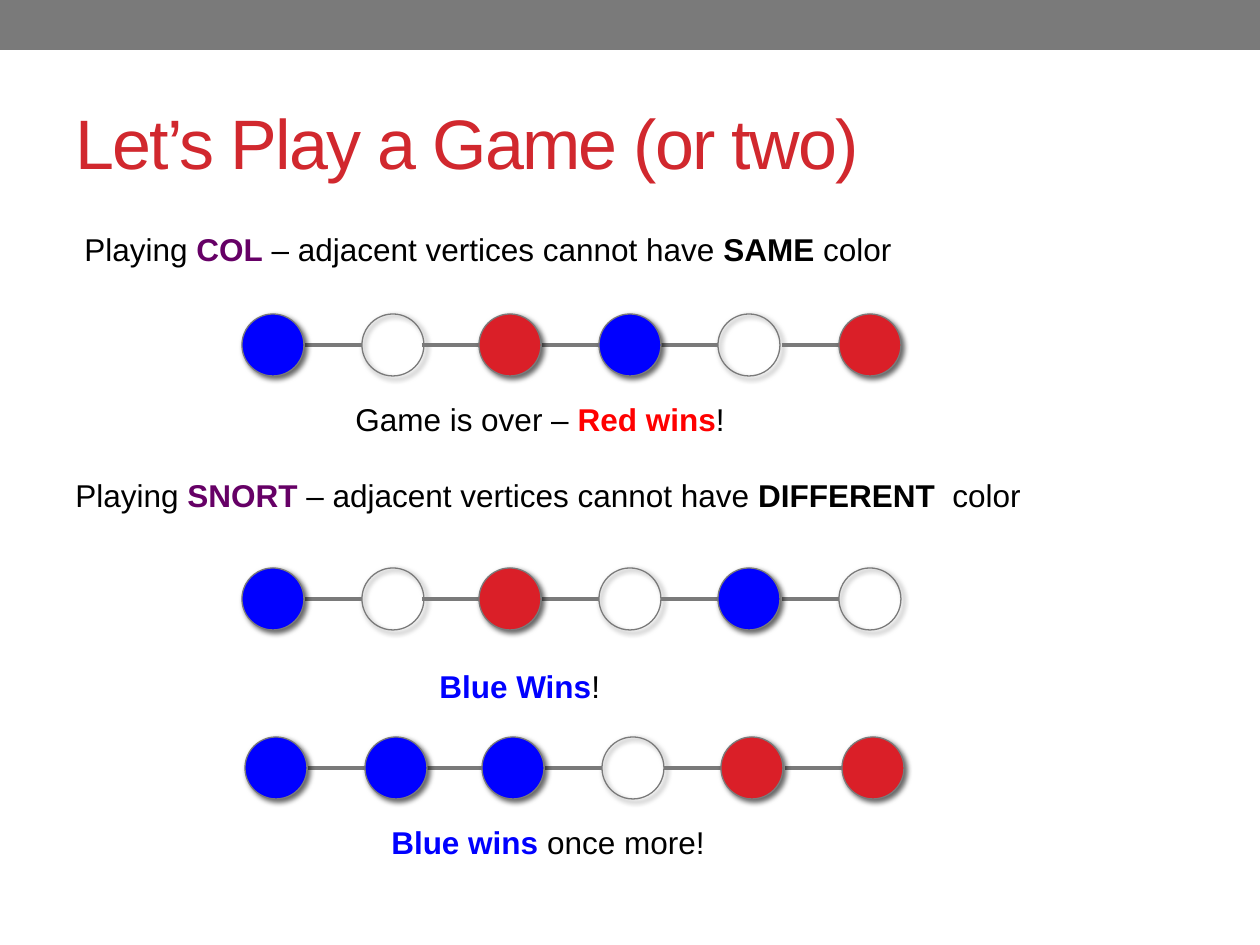
from lxml.etree import SubElement
from pptx import Presentation
from pptx.dml.color import RGBColor
from pptx.enum.shapes import MSO_CONNECTOR as Link, MSO_SHAPE as Kind
from pptx.enum.text import MSO_ANCHOR as Anchor
from pptx.oxml import parse_xml
from pptx.oxml.ns import nsdecls, qn
from pptx.util import Pt

SCALE = 914400 / 126
GRAY = RGBColor(0x7A, 0x7A, 0x7A)
TITLE = RGBColor(0xD1, 0x28, 0x2E)
BLACK = RGBColor(0, 0, 0)
PURPLE = RGBColor(0x66, 0, 0x66)
BLUE = RGBColor(0, 0, 0xFF)
RED = RGBColor(0xFF, 0, 0)
DISC = RGBColor(0xDA, 0x1F, 0x28)

SIZE = 62
GAP = 57
LEFTS = (242, 362, 479, 599, 718, 839)
COLORS = {"B": BLUE, "R": DISC}
GAMES = (("B-RB-R", 0, 314), ("B-R-B-", 0, 568), ("BBB-RR", 3, 737))

LINES = (
    ((72, 224, 839, 50), (("Playing ", BLACK, False), ("COL", PURPLE, True),
                          (" – adjacent vertices cannot have ", BLACK, False),
                          ("SAME", BLACK, True), (" color", BLACK, False))),
    ((343, 394, 427, 50), (("Game is over – ", BLACK, False),
                           ("Red wins", RED, True), ("!", BLACK, False))),
    ((63, 470, 980, 89), (("Playing ", BLACK, False), ("SNORT ", PURPLE, True),
                          ("– adjacent vertices cannot have ", BLACK, False),
                          ("DIFFERENT  ", BLACK, True), ("color", BLACK, False))),
    ((427, 661, 188, 50), (("Blue Wins", BLUE, True), ("!", BLACK, False))),
    ((379, 817, 341, 50), (("Blue wins ", BLUE, True), ("once more!", BLACK, False))),
)

SHADOW = (
    f'<a:effectLst {nsdecls("a")}><a:outerShdw blurRad="{Pt(3)}" dist="{Pt(2)}" '
    'dir="2700000" rotWithShape="0"><a:srgbClr val="000000">'
    '<a:alpha val="60000"/></a:srgbClr></a:outerShdw></a:effectLst>'
)


def px(*nums):
    return [round(n * SCALE) for n in nums]


def add_bar(slide, box, color):
    bar = slide.shapes.add_shape(Kind.RECTANGLE, *px(*box))
    bar.shadow.inherit = False
    bar.fill.solid()
    bar.fill.fore_color.rgb = color
    bar.line.fill.background()


def add_text(slide, box, runs, size=18, anchor=Anchor.TOP, wrap=False):
    frame = slide.shapes.add_textbox(*px(*box)).text_frame
    for key, val in {"word_wrap": wrap, "vertical_anchor": anchor}.items():
        setattr(frame, key, val)
    for text, color, bold in runs:
        run = frame.paragraphs[0].add_run()
        run.text = text
        for key, val in {"name": "Arial", "size": Pt(size), "bold": bold}.items():
            setattr(run.font, key, val)
        run.font.color.rgb = color
    return frame


def add_disc(slide, left, top, color):
    disc = slide.shapes.add_shape(Kind.OVAL, *px(left, top, SIZE, SIZE))
    if color:
        disc.fill.solid()
        disc.fill.fore_color.rgb = color
    else:
        disc.fill.background()
    disc.line.color.rgb = GRAY
    disc.line.width = Pt(0.75)
    disc.element.spPr.append(parse_xml(SHADOW))


def add_edge(slide, left, right, mid):
    edge = slide.shapes.add_connector(Link.STRAIGHT, *px(left, mid, right, mid))
    edge.line.color.rgb = GRAY
    edge.line.width = Pt(2.08)
    SubElement(edge.element.spPr, qn("a:effectLst"))


def add_game(slide, marks, shift, top):
    spots = [(left + shift, COLORS.get(mark)) for left, mark in zip(LEFTS, marks)]
    for left, color in spots:
        if not color:
            add_disc(slide, left, top, color)
    for left, _ in spots[1:]:
        add_edge(slide, left - GAP, left, top + SIZE // 2)
    for left, color in spots:
        if color:
            add_disc(slide, left, top, color)


def main():
    deck = Presentation()
    deck.slide_width, deck.slide_height = px(1260, 945)
    slide = deck.slides.add_slide(deck.slide_layouts[6])
    add_bar(slide, (0, 0, 1260, 50), GRAY)
    head = add_text(slide, (63, 73, 1134, 136),
                    [("Let’s Play a Game (or two)", TITLE, False)],
                    40, Anchor.MIDDLE, True)
    head.paragraphs[0].runs[0].font._element.set("spc", "-100")
    for game in GAMES:
        add_game(slide, *game)
    for box, runs in LINES:
        add_text(slide, box, runs)
    deck.save("out.pptx")


if __name__ == "__main__":
    main()
